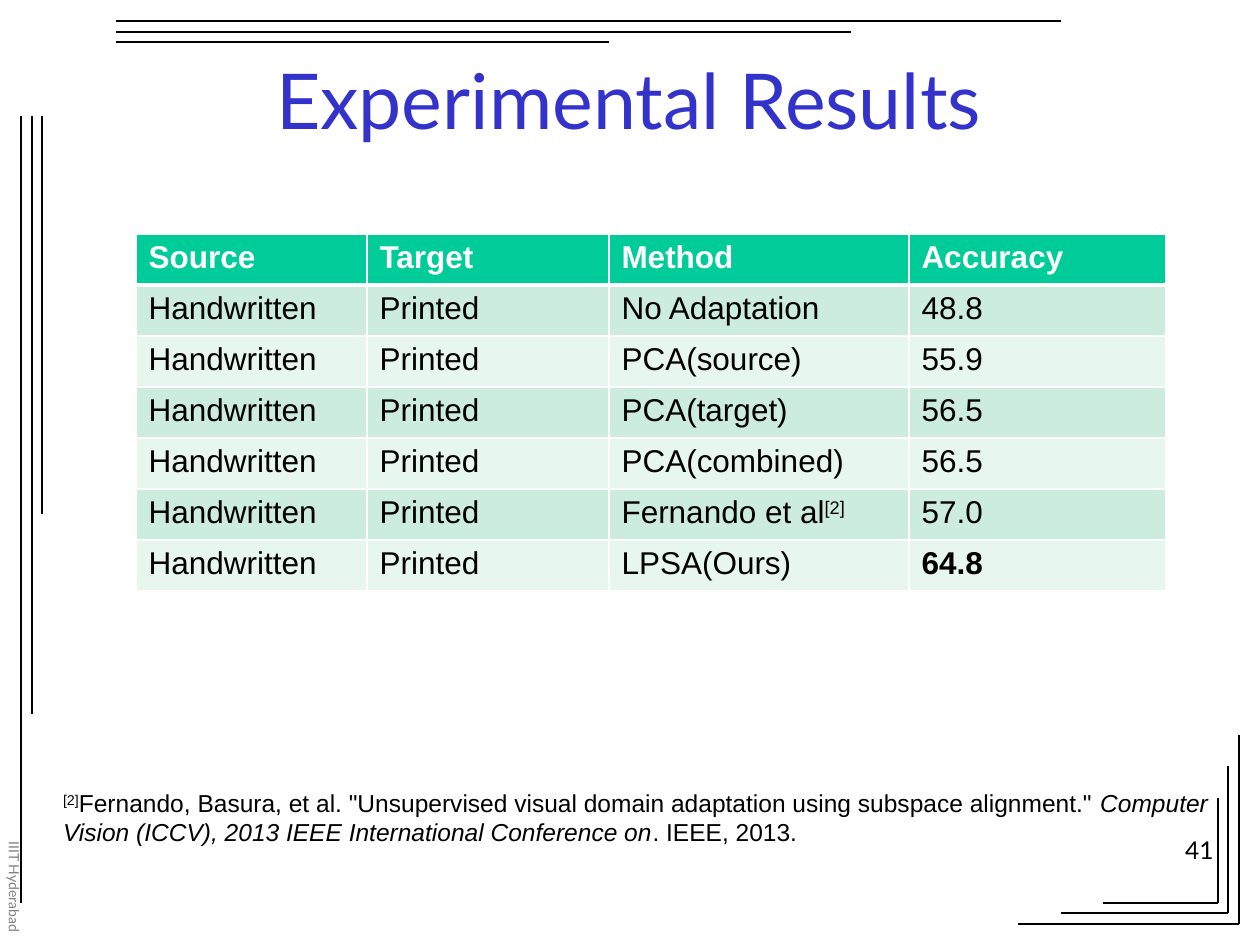
from dataclasses import dataclass

from lxml import etree
from pptx import Presentation
from pptx.dml.color import RGBColor
from pptx.enum.shapes import MSO_CONNECTOR
from pptx.enum.text import MSO_ANCHOR, MSO_AUTO_SIZE, PP_ALIGN
from pptx.oxml.ns import qn
from pptx.util import Emu, Pt

STRAIGHT = MSO_CONNECTOR.STRAIGHT
MIDDLE = MSO_ANCHOR.MIDDLE
LEFT, CENTER, RIGHT = PP_ALIGN.LEFT, PP_ALIGN.CENTER, PP_ALIGN.RIGHT
FIXED, GROW = MSO_AUTO_SIZE.NONE, MSO_AUTO_SIZE.SHAPE_TO_FIT_TEXT

TITLE = "Experimental Results"
HEADER = ["Source", "Target", "Method", "Accuracy"]
RESULTS = [  # method, superscript mark, accuracy
    ("No Adaptation", "", "48.8"),
    ("PCA(source)", "", "55.9"),
    ("PCA(target)", "", "56.5"),
    ("PCA(combined)", "", "56.5"),
    ("Fernando et al", "[2]", "57.0"),
    ("LPSA(Ours)", "", "64.8"),
]
REFERENCE = [  # text, style
    ("[2]", "superscript"),
    ('Fernando, Basura, et al. "Unsupervised visual domain adaptation '
     'using subspace alignment." ', ""),
    ("Computer Vision (ICCV), 2013 IEEE International Conference on", "italic"),
    (". IEEE, 2013.", ""),
]
PAGE_NUMBER = "41"
INSTITUTE = "IIIT Hyderabad"

# All lengths are px, 126 to the inch
WIDTH, HEIGHT = 1260, 945
TITLE_BOX = (94, 21, 1070, 156)
NUMBER_BOX = (1164, 829, 62, 52)
INSTITUTE_BOX = (-13, 829, 42, 116)
REFERENCE_BOX = (63, 788, 1166, 53)
TABLE_LEFT, TABLE_TOP, ROW_HEIGHT = 136, 234, 51
COLUMNS = [231, 242, 300, 257]
RULE_START = 116
# distance from edge, then ends of the top, left, bottom and right rules
RULES = [
    (21, 1061, 903, 1018, 735),
    (32, 851, 714, 1061, 766),
    (42, 609, 514, 1103, 798),
]


@dataclass(frozen=True)
class Theme:
    body_font: str = "Arial"
    display_font: str = "Lato"
    title: str = "3333CC"
    ink: str = "000000"
    paper: str = "FFFFFF"
    muted: str = "808080"
    header: str = "00CC99"
    bands: tuple = ("CCECDE", "E7F6EF")
    title_size: int = 44
    table_size: int = 18
    note_size: int = 14
    small_size: int = 8
    rule: float = 0.75
    border: int = 1
    header_border: int = 3


THEME = Theme()


def px(length):
    return Emu(round(length * 914400 / 126))


def place(shape, area):
    shape.left, shape.top, shape.width, shape.height = map(px, area)


def write(para, spans, font, size, color, align=LEFT, bold=False):
    """Fill a paragraph with (text, style) spans."""
    para.alignment = align
    for text, style in spans:
        span = para.add_run()
        span.text = text
        span.font.name, span.font.size = font, Pt(size)
        span.font.color.rgb = RGBColor.from_string(color)
        span.font.bold = bold
        span.font.italic = style == "italic"
        if style == "superscript":
            span.font._element.set("baseline", "30000")


def add_box(page, area):
    box = page.shapes.add_textbox(*map(px, area))
    box.text_frame.word_wrap = True
    return box


def add_rule(page, *ends):
    rule = page.shapes.add_connector(STRAIGHT, *map(px, ends))
    rule.line.width = Pt(THEME.rule)
    rule.line.color.rgb = RGBColor.from_string(THEME.ink)
    etree.SubElement(rule._element.spPr, qn("a:effectLst"))


def add_frame(page):
    for inset, top_end, left_end, bottom_start, right_start in RULES:
        right, bottom = WIDTH - inset, HEIGHT - inset
        add_rule(page, RULE_START, inset, top_end, inset)
        add_rule(page, inset, RULE_START, inset, left_end)
        add_rule(page, bottom_start, bottom, right, bottom)
        add_rule(page, right, right_start, right, bottom)


def set_borders(cell, top, bottom):
    properties = cell._tc.get_or_add_tcPr()
    sides = {"L": THEME.border, "R": THEME.border, "T": top, "B": bottom}
    for side, width in sides.items():
        line = etree.SubElement(properties, qn(f"a:ln{side}"), w=str(Pt(width)))
        fill = etree.SubElement(line, qn("a:solidFill"))
        etree.SubElement(fill, qn("a:srgbClr"), val=THEME.paper)


def add_results(page):
    best = max(float(accuracy) for _, _, accuracy in RESULTS)
    rows = [[[(name, "")] for name in HEADER]]
    for method, mark, accuracy in RESULTS:
        method_spans = [(method, "")] + ([(mark, "superscript")] if mark else [])
        rows.append([[("Handwritten", "")], [("Printed", "")],
                     method_spans, [(accuracy, "")]])
    area = (TABLE_LEFT, TABLE_TOP, sum(COLUMNS), ROW_HEIGHT * len(rows))
    table = page.shapes.add_table(len(rows), len(COLUMNS), *map(px, area)).table
    table.horz_banding = False
    for column, width in zip(table.columns, COLUMNS):
        column.width = px(width)
    for r, row in enumerate(rows):
        table.rows[r].height = px(ROW_HEIGHT)
        is_header = r == 0
        top = THEME.header_border if r == 1 else THEME.border
        bottom = THEME.header_border if is_header else THEME.border
        fill = THEME.header if is_header else THEME.bands[(r - 1) % 2]
        color = THEME.paper if is_header else THEME.ink
        for c, spans in enumerate(row):
            cell = table.cell(r, c)
            set_borders(cell, top, bottom)
            cell.fill.solid()
            cell.fill.fore_color.rgb = RGBColor.from_string(fill)
            is_best = not is_header and c == 3 and float(spans[0][0]) == best
            write(cell.text_frame.paragraphs[0], spans, THEME.body_font,
                  THEME.table_size, color, bold=is_header or is_best)


def add_texts(page):
    title = page.shapes.title
    place(title, TITLE_BOX)
    title.text_frame.auto_size = FIXED
    title.text_frame.vertical_anchor = MIDDLE
    write(title.text_frame.paragraphs[0], [(TITLE, "")], THEME.display_font,
          THEME.title_size, THEME.title, CENTER)

    institute = add_box(page, INSTITUTE_BOX).text_frame
    institute.auto_size = GROW
    institute._txBody.bodyPr.set("vert", "eaVert")
    write(institute.paragraphs[0], [(INSTITUTE, "")], THEME.display_font,
          THEME.small_size, THEME.muted)

    number = add_box(page, NUMBER_BOX).text_frame
    write(number.paragraphs[0], [(PAGE_NUMBER, "")], THEME.display_font,
          THEME.note_size, THEME.ink, RIGHT)

    reference = add_box(page, REFERENCE_BOX).text_frame
    reference.margin_left = reference.margin_right = 0
    reference.margin_top = reference.margin_bottom = 0
    write(reference.paragraphs[0], REFERENCE, THEME.body_font,
          THEME.note_size, THEME.ink)


def main():
    deck = Presentation()
    deck.slide_width, deck.slide_height = px(WIDTH), px(HEIGHT)
    page = deck.slides.add_slide(deck.slide_layouts.get_by_name("Title Only"))
    add_frame(page)
    add_texts(page)
    add_results(page)
    deck.save("out.pptx")


if __name__ == "__main__":
    main()
